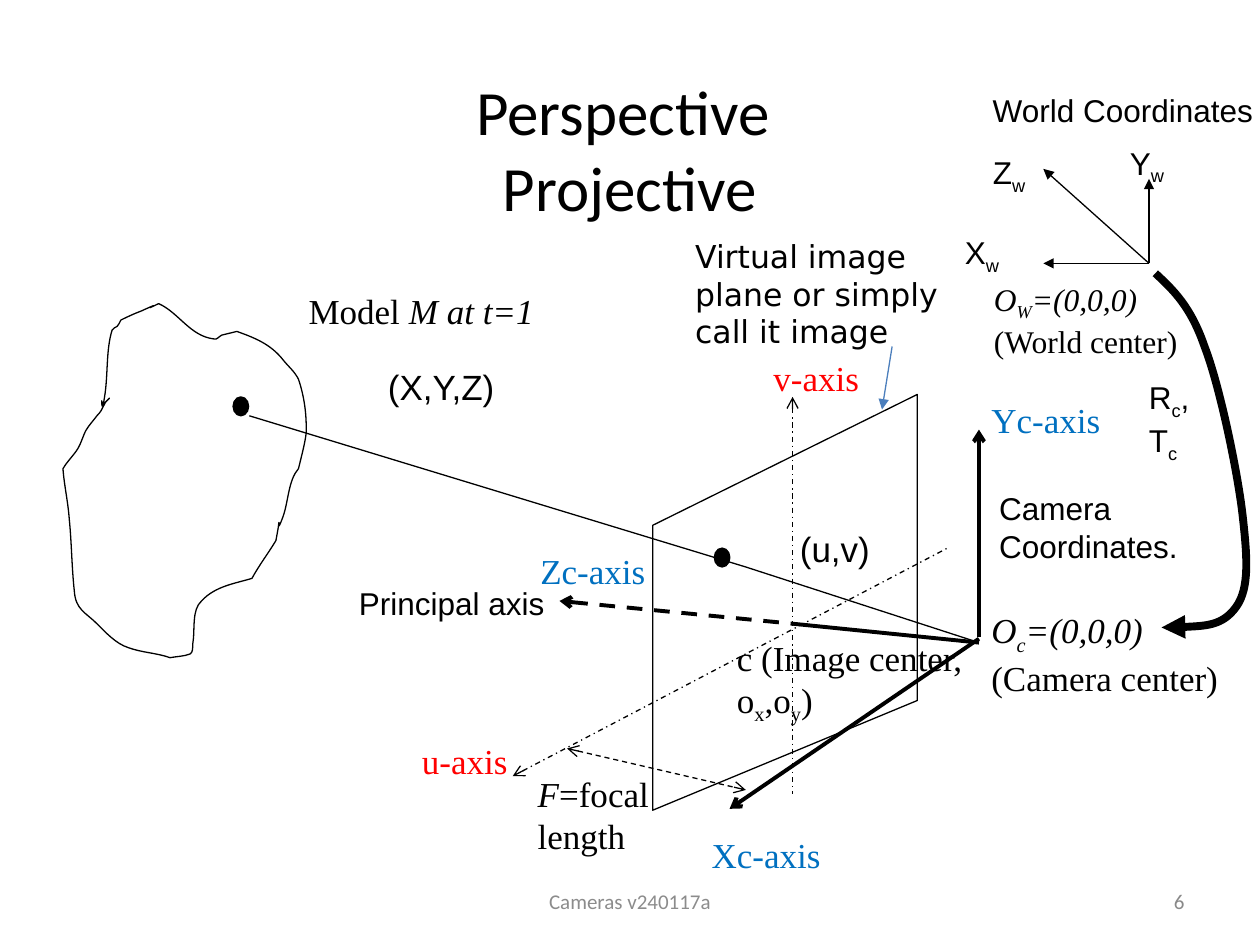
from dataclasses import dataclass

from pptx import Presentation
from pptx.dml.color import RGBColor
from pptx.enum.dml import MSO_LINE
from pptx.enum.shapes import MSO_CONNECTOR, MSO_SHAPE
from pptx.enum.text import MSO_ANCHOR, MSO_AUTO_SIZE, PP_ALIGN
from pptx.oxml.ns import qn
from pptx.oxml.xmlchemy import OxmlElement
from pptx.util import Pt


@dataclass(frozen=True)
class Theme:
    ink: str = "000000"
    paper: str = "FFFFFF"
    camera: str = "0070C0"
    image: str = "FF0000"
    pointer: str = "4B7EBC"
    footer: str = "8C8C8C"
    number: str = "898989"
    title_size: int = 36
    math_size: int = 20
    label_size: int = 18
    footer_size: int = 12
    thin: float = 0.75
    bold: float = 2.25
    heavy: float = 4.5
    heading_font: str = "Calibri"
    math_font: str = "Times New Roman"
    label_font: str = "Arial"
    note_font: str = "DejaVu Sans"


THEME = Theme()
MATH = {"font": THEME.math_font, "size": THEME.math_size}
LABEL = {"font": THEME.label_font, "size": THEME.label_size}
FIXED = {**LABEL, "wrap": False}
POINT_LABEL = {**FIXED, "size": THEME.math_size}
FOOTER = {"font": THEME.heading_font, "size": THEME.footer_size, "anchor": MSO_ANCHOR.MIDDLE}

# An outline is a start point, then rows of an end point (a straight side)
# or of two control points and an end point (a curve).
MODEL = [
    (62.6, 227.5),
    (58.3, 231.1, 59.8, 233.3, 55.4, 237.6), (53.3, 240.5, 51.1, 242.6, 49, 246.2),
    (46.8, 250.6, 46.1, 254.9, 42.5, 259.2), (40.3, 262.1, 38.2, 264.2, 36, 267.8),
    (36.7, 277.2, 38.9, 286.6, 39.6, 296.6), (41, 310.3, 41, 324, 42.5, 337.7),
    (43.2, 348.5, 49, 349.9, 55.4, 356.4), (59.8, 360.7, 66.2, 367.9, 73.4, 370.1),
    (81.4, 373, 89.3, 373, 97.2, 375.8), (100.8, 375.1, 105.1, 375.1, 108.7, 373.7),
    (110.2, 373, 110.2, 370.1, 110.2, 367.9), (111.6, 360, 109.4, 348.5, 115.2, 343.4),
    (123.1, 334.8, 134.6, 333.4, 144, 330.5), (148.3, 322.6, 153.4, 316.1, 157.7, 308.9),
    (162, 285.8, 156.2, 311, 162, 294.5), (164.9, 285.8, 164.9, 274.3, 170.6, 267.8),
    (172.1, 261.4, 175.7, 248.4, 175, 244.1), (175, 234.7, 173.5, 225.4, 170.6, 216.7),
    (168.5, 212.4, 164.9, 209.5, 162, 205.9), (154.8, 196.6, 145.4, 193, 135.4, 189.4),
    (132.5, 190.1, 129.6, 190.8, 126.7, 191.5), (125.3, 192.2, 123.8, 194.4, 122.4, 193.7),
    (108.7, 192.2, 102.2, 178.6, 90.7, 173.5), (77, 180, 97.9, 169.9, 80.6, 177.8),
    (76.3, 179.3, 69.1, 182.9, 69.1, 182.9), (68.4, 184.3, 67.7, 185.8, 67, 186.5),
    (66.2, 187.2, 64.8, 187.2, 64.1, 188.6), (60.5, 200.2, 61.9, 213.8, 59.8, 226.8),
    (57.6, 240.5, 58.3, 222.5, 58.3, 231.8), (62.6, 227.5),
]
IMAGE_PLANE = [(373, 300.2), (373, 463), (524.2, 400.3), (524.2, 225.4), (373, 300.2)]
TRANSFORM = [
    (660.2, 156.2), (670.3, 165.6, 680.4, 175, 688.3, 198),
    (697, 220.3, 707, 268.6, 709.9, 293), (712.8, 318.2, 714.2, 336.2, 706.3, 347),
    (698.4, 357.8, 681.1, 358.6, 663.8, 358.6),
]


class Sketch:
    """Draws on one slide in the theme's style; lengths are points."""

    def __init__(self, page, theme):
        self.page, self.theme = page, theme

    def stroke(self, item, color=None, width=None, dash=None, head=None, tail=None):
        item.line.color.rgb = RGBColor.from_string(color or self.theme.ink)
        item.line.width = Pt(width or self.theme.thin)
        if dash:
            item.line.dash_style = dash
        outline = item._element.spPr.find(qn("a:ln"))
        for tag, kind in {"a:headEnd": head, "a:tailEnd": tail}.items():
            if kind:
                end = OxmlElement(tag)
                end.set("type", kind)
                outline.append(end)

    def line(self, start, end, **style):
        connector = self.page.shapes.add_connector(
            MSO_CONNECTOR.STRAIGHT, *(Pt(value) for value in (*start, *end)))
        self.stroke(connector, **style)
        connector._element.spPr.append(OxmlElement("a:effectLst"))

    def outline(self, start, *segments, closed=True, **style):
        builder = self.page.shapes.build_freeform(*(Pt(value) for value in start))
        ends = [(Pt(segment[-2]), Pt(segment[-1])) for segment in segments]
        builder.add_line_segments(ends, close=closed)
        shape = builder.convert_to_shape()
        sides = list(shape._element.iter(qn("a:lnTo")))
        for side, segment in zip(sides, segments):
            if len(segment) == 6:
                self.bend(shape, side, segment[:4])
        shape.shadow.inherit = False
        if closed:
            shape.fill.solid()
            shape.fill.fore_color.rgb = RGBColor.from_string(self.theme.paper)
        else:
            shape.fill.background()
        self.stroke(shape, **style)

    @staticmethod
    def bend(shape, side, controls):
        """Turn a straight side into a cubic curve with two control points."""
        curve = OxmlElement("a:cubicBezTo")
        for x, y in (controls[:2], controls[2:]):
            point = OxmlElement("a:pt")
            point.set("x", str(Pt(x) - shape.left))
            point.set("y", str(Pt(y) - shape.top))
            curve.append(point)
        curve.append(side[0])
        side.getparent().replace(side, curve)

    def dot(self, left, top):
        shape = self.page.shapes.add_shape(
            MSO_SHAPE.OVAL, Pt(left), Pt(top), Pt(8.9), Pt(10.8))
        shape.shadow.inherit = False
        shape.fill.solid()
        shape.fill.fore_color.rgb = RGBColor.from_string(self.theme.ink)
        self.stroke(shape)

    def text(self, place, *paras, font, size, color=None, wrap=True,
             align=PP_ALIGN.LEFT, anchor=MSO_ANCHOR.TOP):
        """Each para is a string or a list of (text, marks): i italic, s subscript, b break before."""
        box = self.page.shapes.add_textbox(*(Pt(value) for value in place))
        frame = box.text_frame
        frame_format = {
            "word_wrap": wrap, "vertical_anchor": anchor,
            "auto_size": MSO_AUTO_SIZE.NONE if wrap else MSO_AUTO_SIZE.SHAPE_TO_FIT_TEXT,
        }
        for name, value in frame_format.items():
            setattr(frame, name, value)
        for index, content in enumerate(paras):
            para = frame.add_paragraph() if index else frame.paragraphs[0]
            para.alignment = align
            for words, marks in [(content, "")] if isinstance(content, str) else content:
                if "b" in marks:
                    para.add_line_break()
                span = para.add_run()
                span.text = words
                font_format = {"name": font, "size": Pt(size), "italic": "i" in marks}
                for name, value in font_format.items():
                    setattr(span.font, name, value)
                span.font.color.rgb = RGBColor.from_string(color or self.theme.ink)
                if "s" in marks:
                    span._r.get_or_add_rPr().set("baseline", "-25000")


def draw_camera(sketch):
    bold = {"width": THEME.bold}
    dash_dot = {"dash": MSO_LINE.DASH_DOT, "head": "arrow"}
    sketch.outline(*MODEL)
    sketch.outline(*IMAGE_PLANE)
    sketch.line((319.7, 343.4), (452.9, 356.4), dash=MSO_LINE.DASH, head="arrow", **bold)
    sketch.line((293, 443.5), (541.4, 313.2), **dash_dot)
    sketch.line((452.9, 226.8), (452.9, 453.6), **dash_dot)
    sketch.dot(133.2, 226.8)
    sketch.line((142.5, 237.6), (426.2, 324))
    sketch.line((426.2, 324), (559.4, 367.2))
    sketch.line((452.9, 356.4), (559.4, 367.2), **bold)
    sketch.text((169.2, 162, 201, 96.5), [("Model ", ""), ("M at t=1", "i")], **MATH)
    sketch.dot(408.2, 313.2)
    sketch.text((414, 360, 149.8, 64.8), [("c (Image center, o", ""), ("x", "s"),
                                          (",o", ""), ("y", "s"), (")", "")], **MATH)
    sketch.line((416.9, 462.2), (559.4, 365), head="arrow", **bold)
    sketch.line((324, 427.7), (426.2, 451.4), dash=MSO_LINE.DASH, head="arrow", tail="arrow")
    sketch.text((300.2, 437.8, 80, 64.8), [("F", "i"), ("=focal length", "")], **MATH)
    sketch.text((559.4, 344.2, 154.8, 64.8), [("O", "i"), ("c", "is"), ("=(0,0,0)", "i")],
                "(Camera center)", **MATH)
    sketch.line((559.4, 364.3), (559.4, 245.5), tail="arrow", **bold)
    axes = [("Yc-axis", 559.4, 223.9, 80, THEME.camera),
            ("Zc-axis", 301.7, 310.3, 88.6, THEME.camera),
            ("Xc-axis", 399.6, 473, 88.6, THEME.camera),
            ("v-axis", 434.9, 200.2, 88.6, THEME.image),
            ("u-axis", 234, 419, 71.3, THEME.image)]
    for name, left, top, width, color in axes:
        sketch.text((left, top, width, 43.2), name, color=color, **MATH)
    sketch.text((214.6, 205.2, 75.6, 31.7), "(X,Y,Z)", **POINT_LABEL)
    sketch.text((450, 298.1, 54.7, 31), "(u,v)", **POINT_LABEL)
    sketch.text((563.8, 275.8, 116.6, 72), "Camera", "Coordinates.", **FIXED)


def draw_world(sketch):
    origin = (656.6, 150.5)
    for tip in [(656.6, 102.2), (596.2, 150.5), (596.2, 96.5)]:
        sketch.line(origin, tip, tail="triangle")
    sketch.text((560.2, 48.2, 172, 51), "World Coordinates", **LABEL)
    for axis, left, top in [("Y", 638.6, 78.5), ("Z", 560.2, 84.2), ("X", 544.3, 129.6)]:
        sketch.text((left, top, 35.3, 28.8), [(axis, ""), ("w", "s")], **FIXED)
    sketch.text((649.4, 212.4, 38.9, 51), [("R", ""), ("c", "s"), (",", "")],
                [("T", ""), ("c", "s")], **FIXED)
    sketch.outline(*TRANSFORM, closed=False, width=THEME.heavy, tail="triangle")
    sketch.text((198, 330, 120.2, 28.8), "Principal axis", **FIXED)
    sketch.text((560.9, 156.2, 125.3, 51), [("O", "i"), ("W", "is"), ("=(0,0,0)", "i")],
                "(World center)", **{**MATH, "size": THEME.label_size})


def main():
    deck = Presentation()
    deck.slide_width, deck.slide_height = Pt(720), Pt(540)
    sketch = Sketch(deck.slides.add_slide(deck.slide_layouts[6]), THEME)
    sketch.text((36, 39.6, 648, 90), [("Perspective ", ""), ("Projective", "b")],
                font=THEME.heading_font, size=THEME.title_size,
                align=PP_ALIGN.CENTER, anchor=MSO_ANCHOR.MIDDLE)
    draw_camera(sketch)
    draw_world(sketch)
    sketch.text((246, 500.5, 228, 28.8), "Cameras v240117a", color=THEME.footer,
                align=PP_ALIGN.CENTER, **FOOTER)
    sketch.text((516, 500.5, 168, 28.8), "6", color=THEME.number,
                align=PP_ALIGN.RIGHT, **FOOTER)
    sketch.text((390.2, 131.8, 161.3, 72.7), "Virtual image", "plane or simply",
                "call it image", **{**FIXED, "font": THEME.note_font})
    sketch.line((509.8, 198), (504, 234), color=THEME.pointer, tail="triangle")
    deck.save("out.pptx")


if __name__ == "__main__":
    main()
